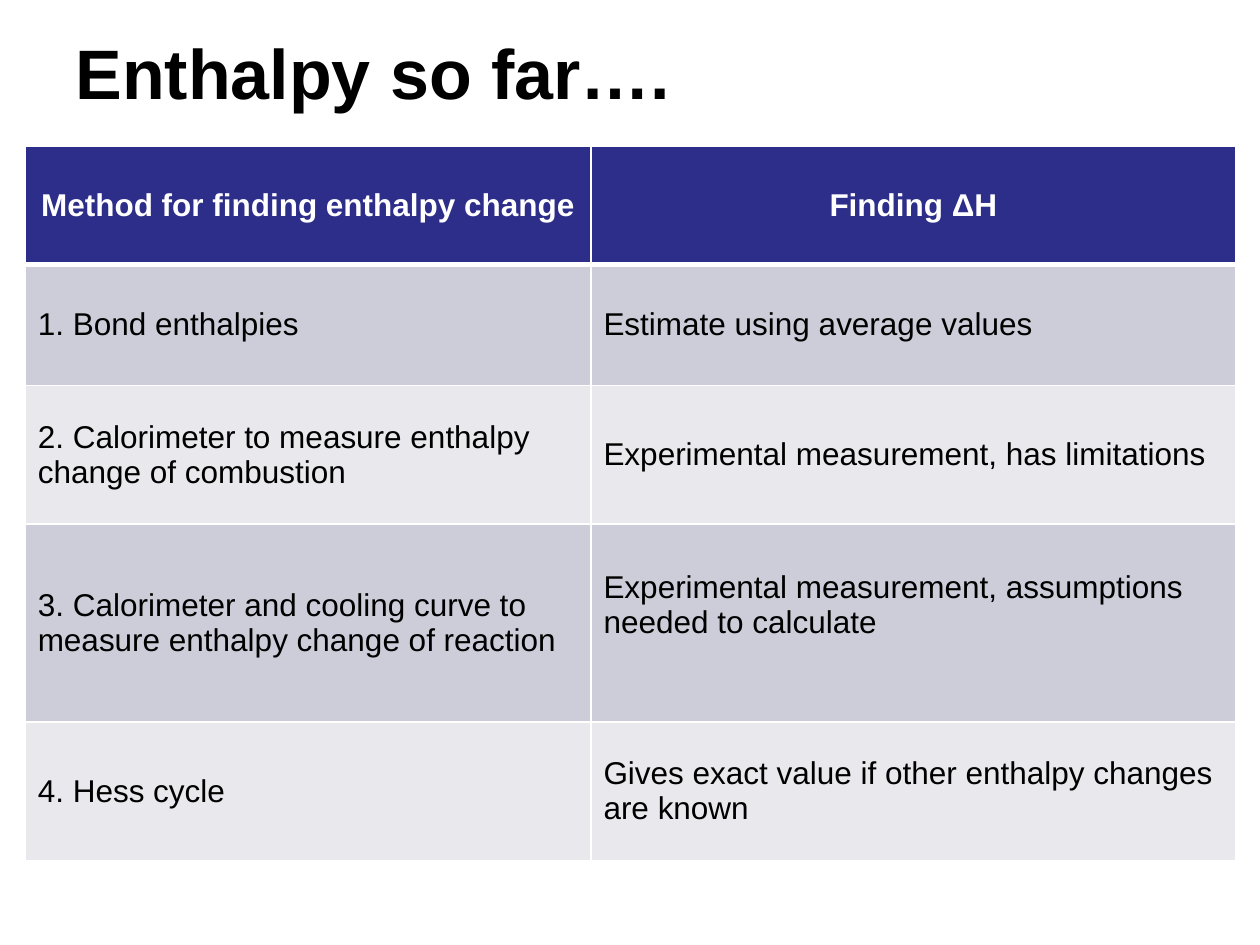
from dataclasses import dataclass

from lxml import etree
from pptx import Presentation
from pptx import util as u
from pptx.dml.color import RGBColor
from pptx.enum import text
from pptx.oxml.ns import qn


@dataclass(frozen=True)
class Theme:
    font: str = "Arial"
    title_size: float = 40
    body_size: float = 18
    ink: str = "000000"
    paper: str = "FFFFFF"
    header: str = "2D2D8A"
    bands: tuple[str, str] = ("CDCDDA", "E8E8ED")
    rule: float = 1
    header_rule: float = 3


@dataclass(frozen=True)
class Row:
    method: str
    finding: str
    height: float
    finding_space: float = 0  # extra room below the right-hand text


THEME = Theme()
WIDTH, HEIGHT = 10, 7.5
TABLE_LEFT, TABLE_TOP = 0.02 * WIDTH, 1.16
COLUMNS = (4.49, 5.12)
ROWS = (
    Row("Method for finding enthalpy change", "Finding ΔH", 0.94),
    Row("1. Bond enthalpies", "Estimate using average values", 0.96),
    Row("2. Calorimeter to measure enthalpy change of combustion",
        "Experimental measurement, has limitations", 1.1),
    Row("3. Calorimeter and cooling curve to measure enthalpy change of reaction",
        "Experimental measurement, assumptions needed to calculate", 1.57, 0.28),
    Row("4. Hess cycle",
        "Gives exact value if other enthalpy changes are known", 1.1),
)


def set_font(p, size: float, color: str, bold: bool) -> None:
    p.font.name = THEME.font
    p.font.size = u.Pt(size)
    p.font.bold = bold
    p.font.color.rgb = RGBColor.from_string(color)


def set_borders(cell, top: float, bottom: float) -> None:
    """Line the four sides of a cell; the schema puts borders before the fill."""
    tc_pr = cell._tc.get_or_add_tcPr()
    sides = {"a:lnL": THEME.rule, "a:lnR": THEME.rule, "a:lnT": top, "a:lnB": bottom}
    for i, (tag, width) in enumerate(sides.items()):
        ln = etree.Element(qn(tag), w=str(u.Pt(width)))
        fill = etree.SubElement(ln, qn("a:solidFill"))
        etree.SubElement(fill, qn("a:srgbClr"), val=THEME.paper)
        tc_pr.insert(i, ln)


def add_title(slide, title: str) -> None:
    sp = slide.shapes.title
    sp.left, sp.top = u.Inches(0.05 * WIDTH), u.Inches(0.04 * HEIGHT)
    sp.width, sp.height = u.Inches(0.9 * WIDTH), u.Inches(0.54)
    tf = sp.text_frame
    tf.text = title
    tf.auto_size = text.MSO_AUTO_SIZE.NONE
    tf.vertical_anchor = text.MSO_ANCHOR.MIDDLE
    p = tf.paragraphs[0]
    p.alignment = text.PP_ALIGN.LEFT
    set_font(p, THEME.title_size, THEME.ink, True)


def fill_cell(cell, words: str, row: int, space: float) -> None:
    is_header = row == 0
    cell.text = words
    cell.vertical_anchor = text.MSO_ANCHOR.MIDDLE
    cell.margin_bottom = u.Inches(0.05 + space)
    cell.fill.solid()
    color = THEME.header if is_header else THEME.bands[(row - 1) % 2]
    cell.fill.fore_color.rgb = RGBColor.from_string(color)
    p = cell.text_frame.paragraphs[0]
    p.alignment = text.PP_ALIGN.CENTER if is_header else text.PP_ALIGN.LEFT
    set_font(p, THEME.body_size, THEME.paper if is_header else THEME.ink, is_header)
    set_borders(cell,
                top=THEME.header_rule if row == 1 else THEME.rule,
                bottom=THEME.header_rule if is_header else THEME.rule)


def add_methods_table(slide, rows: tuple[Row, ...]) -> None:
    frame = slide.shapes.add_table(
        len(rows), len(COLUMNS), u.Inches(TABLE_LEFT), u.Inches(TABLE_TOP),
        u.Inches(sum(COLUMNS)), u.Inches(sum(row.height for row in rows)))
    table = frame.table
    for column, width in zip(table.columns, COLUMNS):
        column.width = u.Inches(width)
    for i, row in enumerate(rows):
        table.rows[i].height = u.Inches(row.height)
        fill_cell(table.cell(i, 0), row.method, i, 0)
        fill_cell(table.cell(i, 1), row.finding, i, row.finding_space)


def main() -> None:
    prs = Presentation()
    prs.slide_width, prs.slide_height = u.Inches(WIDTH), u.Inches(HEIGHT)
    # Title-only layout
    slide = prs.slides.add_slide(prs.slide_layouts[5])
    add_title(slide, "Enthalpy so far….")
    add_methods_table(slide, ROWS)
    prs.save("out.pptx")


if __name__ == "__main__":
    main()
